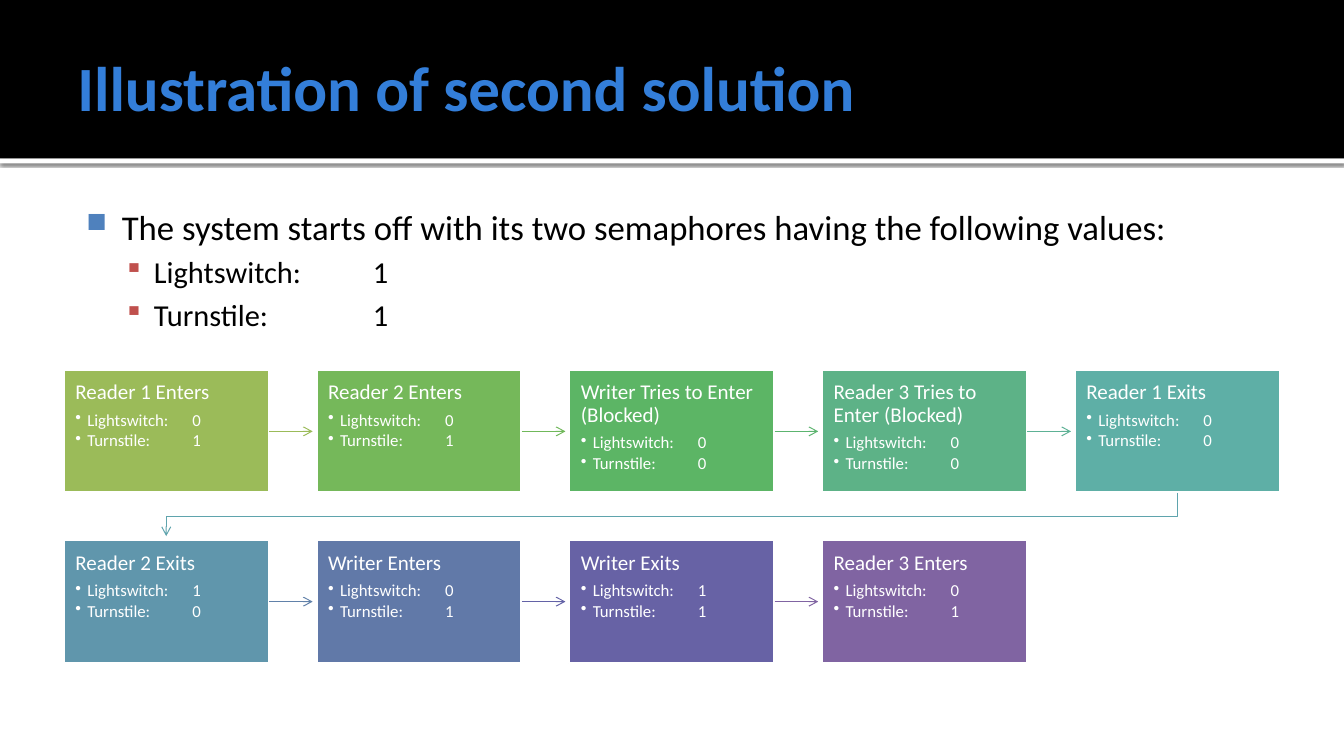
from dataclasses import dataclass

from lxml import etree
from pptx import Presentation
from pptx.dml.color import RGBColor
from pptx.enum.shapes import MSO_CONNECTOR, MSO_SHAPE
from pptx.enum.text import MSO_ANCHOR, PP_ALIGN
from pptx.oxml.ns import qn
from pptx.util import Cm, Pt

RECTANGLE = MSO_SHAPE.RECTANGLE
STRAIGHT = MSO_CONNECTOR.STRAIGHT
TOP, MIDDLE = MSO_ANCHOR.TOP, MSO_ANCHOR.MIDDLE
LEFT = PP_ALIGN.LEFT
RIGHT_SIDE = 3


@dataclass(frozen=True)
class Theme:
    font: str = "Calibri"
    white: str = "FFFFFF"
    black: str = "000000"
    title: str = "337ED9"
    square: str = "4F81BD"
    small_square: str = "C0504D"
    title_size: float = 45
    lead_size: float = 24.8
    value_size: float = 21.7
    step_size: float = 15
    detail_size: float = 12
    outline: float = 2
    arrow: float = 0.75


@dataclass(frozen=True)
class Box:
    left: int
    top: int
    width: int
    height: int


THEME = Theme()
SLIDE_WIDTH, SLIDE_HEIGHT = Cm(33.87), Cm(19.05)
COLUMNS = 5

# Heading, Lightswitch, Turnstile, box colour, colour of the arrow that leaves it
STEPS = [
    ("Reader 1 Enters", 0, 1, "9BBB59", "9BBB59"),
    ("Reader 2 Enters", 0, 1, "75B85A", "70B85A"),
    ("Writer Tries to Enter (Blocked)", 0, 0, "5CB565", "5CB46F"),
    ("Reader 3 Tries to Enter (Blocked)", 0, 0, "5DB287", "5DB195"),
    ("Reader 1 Exits", 0, 0, "5EAFA6", "5FA4AD"),
    ("Reader 2 Exits", 1, 0, "6096AC", "6181A9"),
    ("Writer Enters", 0, 1, "6179A8", "6362A6"),
    ("Writer Exits", 1, 1, "6762A5", "8064A2"),
    ("Reader 3 Enters", 0, 1, "8064A2", None),
]


def apply_format(target, values):
    for name, value in values.items():
        setattr(target, name, value)


def add_element(parent, tag, **attributes):
    return etree.SubElement(parent, qn(tag), attributes)


def prepare_frame(shape, insets, anchor=TOP):
    left, top, right, bottom = (Cm(inset) for inset in insets)
    apply_format(shape.text_frame, {
        "word_wrap": True, "vertical_anchor": anchor,
        "margin_left": left, "margin_top": top,
        "margin_right": right, "margin_bottom": bottom})
    return shape.text_frame


def write_paragraph(frame, text, size, color, first=False, bold=False, **spacing):
    paragraph = frame.paragraphs[0] if first else frame.add_paragraph()
    apply_format(paragraph, {"alignment": LEFT, **spacing})
    run = paragraph.add_run()
    run.text = text
    apply_format(run.font, {"name": THEME.font, "size": Pt(size), "bold": bold})
    run.font.color.rgb = RGBColor.from_string(color)
    return paragraph


def add_bullet(paragraph, mark, color, percent, indent, hanging, tab=None):
    properties = paragraph._p.get_or_add_pPr()
    properties.set("marL", str(Cm(indent)))
    properties.set("indent", str(-Cm(hanging)))
    add_element(add_element(properties, "a:buClr"), "a:srgbClr", val=color)
    add_element(properties, "a:buSzPct", val=str(percent * 1000))
    add_element(properties, "a:buChar", char=mark)
    if tab:
        stops = add_element(properties, "a:tabLst")
        add_element(stops, "a:tab", pos=str(Cm(tab)), algn="l")


def add_rectangle(slide, box, color):
    shape = slide.shapes.add_shape(RECTANGLE, box.left, box.top, box.width, box.height)
    shape.shadow.inherit = False
    shape.fill.solid()
    shape.fill.fore_color.rgb = RGBColor.from_string(color)
    shape.line.fill.background()
    return shape


def add_text_box(slide, box):
    return slide.shapes.add_textbox(box.left, box.top, box.width, box.height)


def style_arrow(arrow, color):
    arrow.line.color.rgb = RGBColor.from_string(color)
    arrow.line.width = Pt(THEME.arrow)
    add_element(arrow.line._get_or_add_ln(), "a:tailEnd", type="arrow")


def add_header(slide, box):
    # White rule with a soft shadow under the black band
    rule = add_rectangle(slide, Box(box.left, box.top + box.height, box.width, Cm(0.13)), THEME.white)
    effects = rule._element.spPr.find(qn("a:effectLst"))
    shadow = add_element(effects, "a:outerShdw", blurRad=str(Pt(2.5)), dist=str(Pt(0.8)),
                         dir="5400000", algn="tl", rotWithShape="0")
    shade = add_element(shadow, "a:srgbClr", val=THEME.black)
    add_element(shade, "a:alpha", val="60000")
    add_rectangle(slide, box, THEME.black)

    # Title
    title = add_text_box(slide, Box(box.left + Cm(1.7), box.top + Cm(0.43), Cm(30.48), Cm(3.48)))
    frame = prepare_frame(title, (0.25, 0.13, 0.13, 0.13), MIDDLE)
    write_paragraph(frame, "Illustration of second solution", THEME.title_size,
                    THEME.title, first=True, bold=True)


def add_start_values(slide, box):
    frame = prepare_frame(add_text_box(slide, box), (0.15, 0.25, 0.25, 0.13))
    lead = write_paragraph(
        frame, "The system starts off with its two semaphores having the following values:",
        THEME.lead_size, THEME.black, first=True)
    add_bullet(lead, "■", THEME.square, 80, 1.22, 0.89)
    for text in ("Lightswitch:\t1", "Turnstile: \t1"):
        value = write_paragraph(frame, text, THEME.value_size, THEME.black, space_before=Pt(4.3))
        add_bullet(value, "▪", THEME.small_square, 90, 2.03, 0.76, tab=7.55)


def add_step(slide, box, heading, lightswitch, turnstile, color):
    shape = add_rectangle(slide, box, color)
    shape.line.color.rgb = RGBColor.from_string(THEME.white)
    shape.line.width = Pt(THEME.outline)
    frame = prepare_frame(shape, (0.3, 0.3, 0.3, 0.3))
    write_paragraph(frame, heading, THEME.step_size, THEME.white, first=True,
                    line_spacing=0.9, space_after=Pt(5.25))
    for text in (f"Lightswitch: \t{lightswitch}", f"Turnstile:\t{turnstile}"):
        detail = write_paragraph(frame, text, THEME.detail_size, THEME.white,
                                 line_spacing=0.9, space_after=Pt(1.8))
        add_bullet(detail, "•", THEME.white, 100, 0.3, 0.3, tab=2.95)
    return shape


def add_next_arrow(slide, step, color):
    start, middle = step.left + step.width, step.top + step.height // 2
    arrow = slide.shapes.add_connector(STRAIGHT, start, middle, start + Cm(1.1), middle)
    arrow.begin_connect(step, RIGHT_SIDE)
    add_element(arrow._element.spPr, "a:effectLst")
    style_arrow(arrow, color)


def add_row_arrow(slide, step, end_x, end_y, color):
    start_x, start_y = step.left + step.width // 2, step.top + step.height
    turn_y = start_y + Cm(0.6)
    builder = slide.shapes.build_freeform(start_x, start_y)
    builder.add_line_segments([(start_x, turn_y), (end_x, turn_y), (end_x, end_y)], close=False)
    arrow = builder.convert_to_shape()
    arrow.shadow.inherit = False
    arrow.fill.background()
    style_arrow(arrow, color)


def add_process(slide, box):
    width, height = Cm(5.18), Cm(3.1)
    column_pitch = (box.width - width) // (COLUMNS - 1)
    row_pitch = box.height - height
    for index, (heading, lightswitch, turnstile, color, arrow_color) in enumerate(STEPS):
        row, column = divmod(index, COLUMNS)
        place = Box(box.left + column * column_pitch, box.top + row * row_pitch, width, height)
        step = add_step(slide, place, heading, lightswitch, turnstile, color)
        if column == COLUMNS - 1:
            add_row_arrow(slide, step, box.left + width // 2,
                          place.top + row_pitch - Cm(0.1), arrow_color)
        elif arrow_color:
            add_next_arrow(slide, step, arrow_color)


def main():
    presentation = Presentation()
    presentation.slide_width, presentation.slide_height = SLIDE_WIDTH, SLIDE_HEIGHT
    slide = presentation.slides.add_slide(presentation.slide_layouts[6])
    add_header(slide, Box(0, 0, SLIDE_WIDTH, Cm(3.99)))
    add_start_values(slide, Box(Cm(1.7), Cm(4.93), Cm(30.48), Cm(3.96)))
    add_process(slide, Box(Cm(1.6), Cm(9.32), Cm(30.66), Cm(7.39)))
    presentation.save("out.pptx")


if __name__ == "__main__":
    main()
